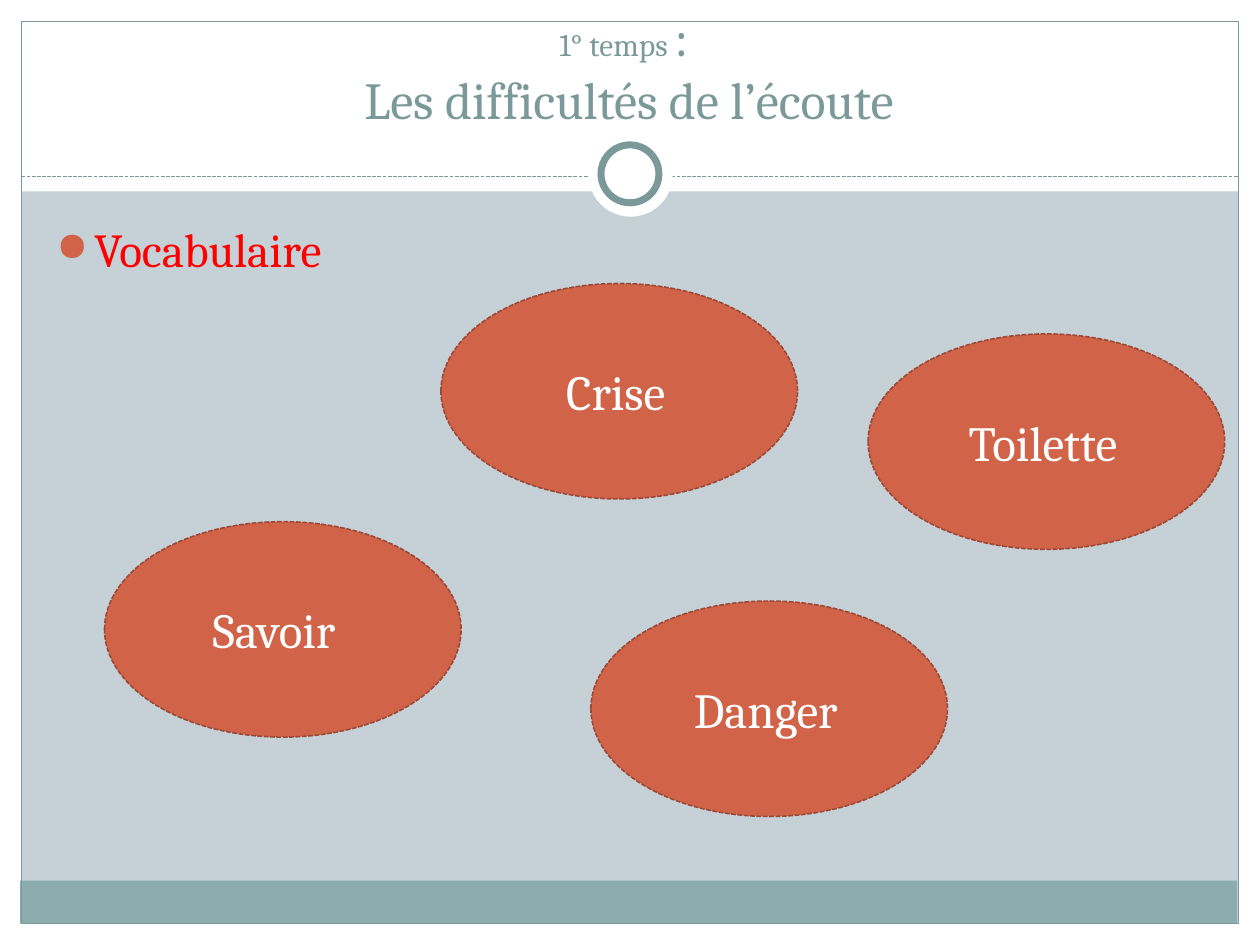
from lxml.etree import SubElement
from pptx import Presentation
from pptx.dml.color import RGBColor
from pptx.enum.dml import MSO_LINE
from pptx.enum.shapes import MSO_CONNECTOR, MSO_SHAPE
from pptx.enum.text import MSO_ANCHOR, PP_ALIGN
from pptx.oxml.ns import qn
from pptx.util import Inches, Pt

WHITE = RGBColor(0xFF, 0xFF, 0xFF)
RED = RGBColor(0xFF, 0x00, 0x00)
BACKGROUND = RGBColor(0xC5, 0xD1, 0xD7)
FOOTER = RGBColor(0x8C, 0xAD, 0xAE)
SLATE = RGBColor(0x7C, 0x99, 0x9A)
RUST = RGBColor(0xD1, 0x63, 0x49)
DARK_RUST = RGBColor(0x9B, 0x49, 0x36)


class SlideBuilder:
    font_name = "Cambria"

    def __init__(self, slide):
        self.slide = slide
        fill = slide.background.fill
        fill.solid()
        fill.fore_color.rgb = BACKGROUND

    def style_line(self, line, color, width, dash=None):
        line.color.rgb = color
        formats = {"width": Pt(width), "dash_style": dash}
        for name, value in formats.items():
            setattr(line, name, value)

    def shape(self, kind, box, fill=None, line=None):
        shape = self.slide.shapes.add_shape(kind, *map(Inches, box))
        shape.shadow.inherit = False
        if fill is None:
            shape.fill.background()
        else:
            shape.fill.solid()
            shape.fill.fore_color.rgb = fill
        if line is None:
            shape.line.fill.background()
        else:
            self.style_line(shape.line, *line)
        return shape

    def dashed_rule(self, left, right, top):
        rule = self.slide.shapes.add_connector(
            MSO_CONNECTOR.STRAIGHT, *map(Inches, (left, top, right, top)))
        self.style_line(rule.line, SLATE, 0.75, MSO_LINE.SQUARE_DOT)
        SubElement(rule._element.spPr, qn("a:effectLst"))

    def run(self, paragraph, text, size, color):
        run = paragraph.add_run()
        run.text = text
        formats = {"name": self.font_name, "size": Pt(size)}
        for name, value in formats.items():
            setattr(run.font, name, value)
        run.font.color.rgb = color

    def text_box(self, box, anchor):
        frame = self.slide.shapes.add_textbox(*map(Inches, box)).text_frame
        formats = {"word_wrap": True, "vertical_anchor": anchor}
        for name, value in formats.items():
            setattr(frame, name, value)
        return frame.paragraphs[0]

    def title(self, box, lead, heading):
        paragraph = self.text_box(box, MSO_ANCHOR.BOTTOM)
        paragraph.alignment = PP_ALIGN.CENTER
        self.run(paragraph, lead, 18, SLATE)
        self.run(paragraph, ": ", 29.7, SLATE)
        paragraph.add_line_break()
        self.run(paragraph, heading, 29.7, SLATE)

    def bullet(self, box, text):
        paragraph = self.text_box(box, MSO_ANCHOR.TOP)
        properties = paragraph._p.get_or_add_pPr()
        properties.set("marL", str(Inches(0.3)))
        properties.set("indent", str(-Inches(0.3)))
        color = SubElement(properties, qn("a:buClr"))
        SubElement(color, qn("a:srgbClr"), val=str(RUST))
        SubElement(properties, qn("a:buSzPct"), val="85000")
        SubElement(properties, qn("a:buChar"), char="●")
        self.run(paragraph, text, 27, RED)

    def word_bubble(self, left, top, word):
        bubble = self.shape(MSO_SHAPE.OVAL, (left, top, 2.83, 1.71), RUST,
                            (DARK_RUST, 0.9, MSO_LINE.SQUARE_DOT))
        frame = bubble.text_frame
        frame.vertical_anchor = MSO_ANCHOR.MIDDLE
        paragraph = frame.paragraphs[0]
        paragraph.alignment = PP_ALIGN.CENTER
        self.run(paragraph, word, 28, WHITE)
        self.run(paragraph, " ", 18, WHITE)


def main():
    presentation = Presentation()
    presentation.slide_width = Inches(10)
    presentation.slide_height = Inches(7.5)
    slide = presentation.slides.add_slide(presentation.slide_layouts[6])
    builder = SlideBuilder(slide)

    # White margins and header
    for box in ((0, 7.33, 10, 0.17), (0, 0, 10, 1.52),
                (0, 0, 0.17, 7.5), (9.83, 0, 0.17, 7.5)):
        builder.shape(MSO_SHAPE.RECTANGLE, box, WHITE)

    # Footer band, frame and header rule
    builder.shape(MSO_SHAPE.RECTANGLE, (0.16, 6.99, 9.66, 0.34), FOOTER)
    builder.shape(MSO_SHAPE.RECTANGLE, (0.17, 0.17, 9.66, 7.16),
                  line=(SLATE, 0.75))
    builder.dashed_rule(0.17, 9.83, 1.4)

    # Ring on the rule
    builder.shape(MSO_SHAPE.OVAL, (4.67, 1.05, 0.67, 0.67), WHITE)
    builder.shape(MSO_SHAPE.OVAL, (4.77, 1.15, 0.46, 0.46), WHITE, (SLATE, 4))

    # Body
    builder.bullet((0.35, 1.7, 9.3, 5), "Vocabulaire")
    for left, top, word in ((3.5, 2.25, "Crise"), (6.89, 2.65, "Toilette"),
                            (0.83, 4.14, "Savoir "), (4.69, 4.77, "Danger")):
        builder.word_bubble(left, top, word)

    # Title
    builder.title((0.33, 0.25, 9.33, 0.83), "1° temps ",
                  "Les difficultés de l’écoute")

    presentation.save("out.pptx")


if __name__ == "__main__":
    main()
